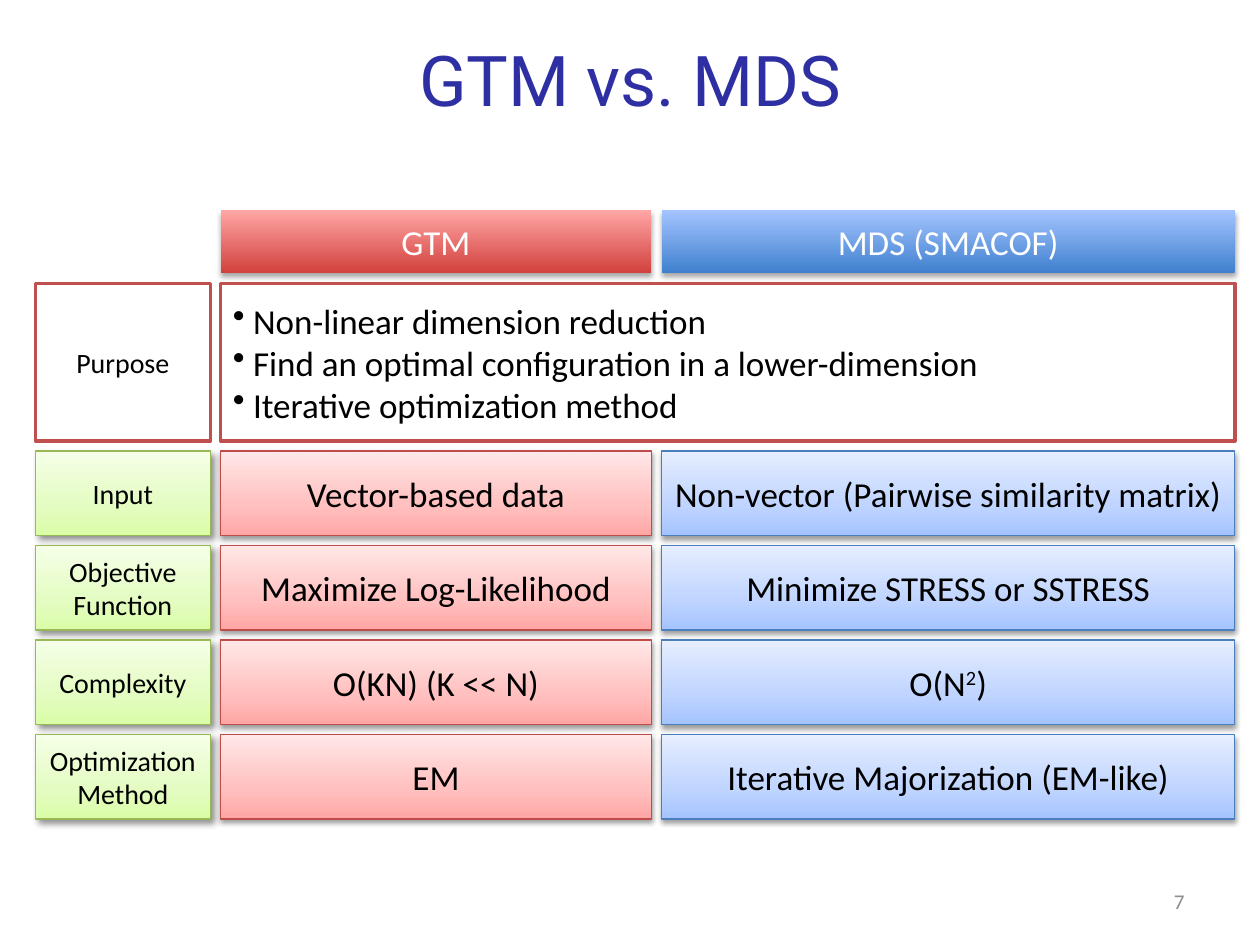
from dataclasses import dataclass
from lxml.etree import SubElement
from pptx import Presentation
from pptx.dml.color import RGBColor
from pptx.enum.shapes import MSO_SHAPE as Shape
from pptx.enum.text import MSO_ANCHOR as Anchor, PP_ALIGN as Align
from pptx.oxml.ns import qn
from pptx.util import Inches, Pt


@dataclass(frozen=True)
class Look:
    stops: tuple
    line: str = None
    shadow: tuple = (38, 3.1, 1.6, 90)
    text: str = "000000"
    weight: float = 0.75


class Theme:
    font, title_font = "Calibri", "Roboto"
    title_size, body_size, label_size, number_size = 40, 20, 16, 12
    title, number = "2F2FA4", "8C8C8C"
    header_shadow = (35, 3.1, 1.8, 90)
    red_header = Look(((0, "D1403C"), (100, "FFA6A5")), None, header_shadow, "FFFFFF")
    blue_header = Look(((0, "3F80CE"), (100, "A4C4FF")), None, header_shadow, "FFFFFF")
    red = Look(((0, "FFA6A5"), (35, "FFC0BF"), (100, "FFE7E7")), "BF4C48")
    blue = Look(((0, "A4C4FF"), (35, "BFD4FF"), (100, "E6EEFF")), "4B7EBC")
    green = Look(((0, "DAFDA7"), (35, "E4FCC2"), (100, "F5FFE7")), "98B955", (43, 4, 3, 45))
    plain = Look(((0, "FFFFFF"),), "C0504D", None, weight=2)


class PageBuilder:
    """Draws styled elements on the current page."""

    def __init__(self, page, theme):
        self.page, self.theme = page, theme

    def format_text(self, frame, size, color, align, font=None):
        frame.word_wrap = True
        frame.vertical_anchor = Anchor.MIDDLE
        for para in frame.paragraphs:
            para.alignment = align
            para.font.name = font or self.theme.font
            para.font.size = Pt(size)
            para.font.color.rgb = RGBColor.from_string(color)

    def title(self, text, left, top, width, height):
        box = self.page.shapes.title
        box.left, box.top, box.width, box.height = map(Inches, (left, top, width, height))
        box.text_frame.text = text
        self.format_text(box.text_frame, self.theme.title_size, self.theme.title,
                         Align.CENTER, self.theme.title_font)

    def number(self, text, left, top, width, height):
        box = self.page.shapes.add_textbox(*map(Inches, (left, top, width, height)))
        box.text_frame.text = text
        self.format_text(box.text_frame, self.theme.number_size, self.theme.number, Align.RIGHT)

    def cell(self, text, look, left, top, width, height, size=None, align=Align.CENTER):
        box = self.page.shapes.add_shape(
            Shape.RECTANGLE, *map(Inches, (left, top, width, height)))
        self.paint(box, look)
        box.text_frame.text = text
        self.format_text(box.text_frame, size or self.theme.body_size, look.text, align)
        return box

    def paint(self, box, look):
        if len(look.stops) == 1:
            box.fill.solid()
            box.fill.fore_color.rgb = RGBColor.from_string(look.stops[0][1])
        else:
            box.fill.gradient()
            box.fill.gradient_angle = 90
            stop_list = box._element.spPr.find(qn("a:gradFill")).find(qn("a:gsLst"))
            stop_list[:] = []
            for position, color in look.stops:
                stop = SubElement(stop_list, qn("a:gs"), pos=str(position * 1000))
                SubElement(stop, qn("a:srgbClr"), val=color)
        if look.line:
            box.line.color.rgb = RGBColor.from_string(look.line)
            box.line.width = Pt(look.weight)
        else:
            box.line.fill.background()
        box.shadow.inherit = False
        if look.shadow:
            self.cast_shadow(box, *look.shadow)

    def cast_shadow(self, box, opacity, blur, distance, angle):
        effects = box._element.spPr.find(qn("a:effectLst"))
        shadow = SubElement(effects, qn("a:outerShdw"), blurRad=str(Pt(blur)),
                            dist=str(Pt(distance)), dir=str(angle * 60000), rotWithShape="0")
        color = SubElement(shadow, qn("a:srgbClr"), val="000000")
        SubElement(color, qn("a:alpha"), val=str(opacity * 1000))

    def bullets(self, items, look, left, top, width, height):
        box = self.cell("\n".join(items), look, left, top, width, height, align=Align.LEFT)
        for para in box.text_frame.paragraphs:
            props = para._p.get_or_add_pPr()
            props.set("marL", str(Inches(0.16)))
            props.set("indent", str(Inches(-0.16)))
            bullet = props.makeelement(qn("a:buChar"), {"char": "•"})
            props.find(qn("a:defRPr")).addprevious(bullet)

    def power(self, box, base, exponent, ending):
        para = box.text_frame.paragraphs[0]
        for text in (base, exponent, ending):
            span = para.add_run()
            span.text = text
            if text == exponent:
                span._r.get_or_add_rPr().set("baseline", "30000")


def main():
    theme = Theme()
    deck = Presentation()
    deck.slide_width, deck.slide_height = Inches(10), Inches(7.5)
    builder = PageBuilder(deck.slides.add_slide(deck.slide_layouts[5]), theme)
    builder.title("GTM vs. MDS", 0.5, 0, 9, 1.25)
    builder.number("7", 7.17, 6.95, 2.33, 0.4)

    label, gtm, mds = (0.28, 1.39), (1.75, 3.42), (5.25, 4.55)
    for text, look, (left, width) in (("GTM", theme.red_header, gtm),
                                      ("MDS (SMACOF)", theme.blue_header, mds)):
        builder.cell(text, look, left, 1.67, width, 0.5)

    builder.cell("Purpose", theme.plain, label[0], 2.25, label[1], 1.25, theme.label_size)
    builder.bullets(("Non-linear dimension reduction",
                     "Find an optimal configuration in a lower-dimension",
                     "Iterative optimization method"),
                    theme.plain, gtm[0], 2.25, sum(mds) - gtm[0], 1.25)

    rows = (
        ("Input", "Vector-based data", "Non-vector (Pairwise similarity matrix)"),
        ("Objective\vFunction", "Maximize Log-Likelihood", "Minimize STRESS or SSTRESS"),
        ("Complexity", "O(KN) (K << N)", ""),
        ("Optimization\nMethod", "EM", "Iterative Majorization (EM-like)"),
    )
    for index, (name, gtm_text, mds_text) in enumerate(rows):
        top = 3.58 + 0.75 * index
        builder.cell(name, theme.green, label[0], top, label[1], 0.67, theme.label_size)
        builder.cell(gtm_text, theme.red, gtm[0], top, gtm[1], 0.67)
        box = builder.cell(mds_text, theme.blue, mds[0], top, mds[1], 0.67)
        if not mds_text:
            builder.power(box, "O(N", "2", ")")

    deck.save("out.pptx")


if __name__ == "__main__":
    main()
